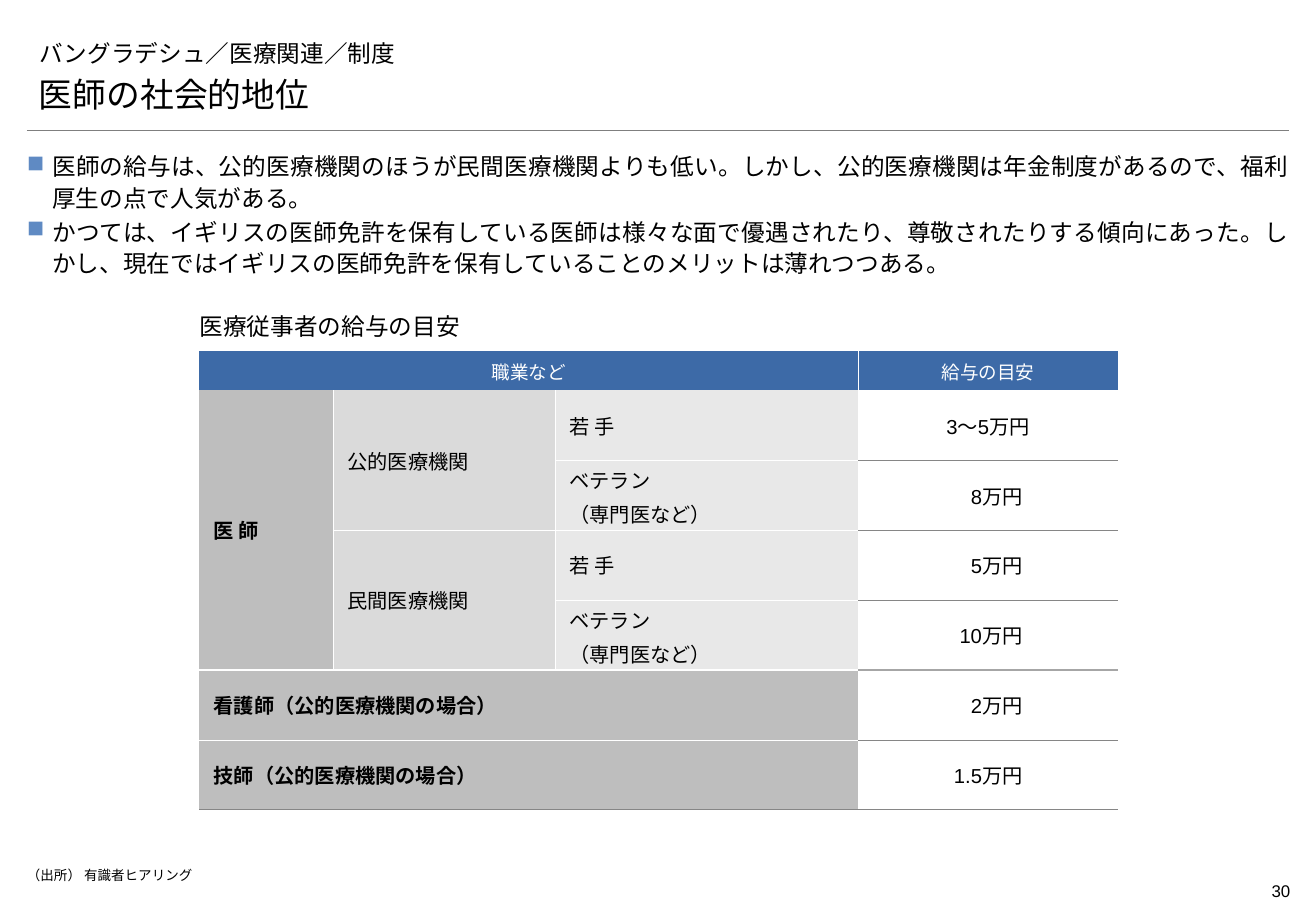
from dataclasses import dataclass

from lxml import etree
from pptx import Presentation
from pptx.dml.color import RGBColor
from pptx.enum.lang import MSO_LANGUAGE_ID
from pptx.enum.shapes import MSO_CONNECTOR
from pptx.enum.text import MSO_ANCHOR, PP_ALIGN
from pptx.oxml.ns import qn
from pptx.util import Pt

LEFT, CENTER, RIGHT, JUSTIFY = PP_ALIGN.LEFT, PP_ALIGN.CENTER, PP_ALIGN.RIGHT, PP_ALIGN.JUSTIFY
TOP, MIDDLE, BOTTOM = MSO_ANCHOR.TOP, MSO_ANCHOR.MIDDLE, MSO_ANCHOR.BOTTOM
JAPANESE = MSO_LANGUAGE_ID.JAPANESE
STRAIGHT = MSO_CONNECTOR.STRAIGHT


@dataclass(frozen=True)
class Theme:
    text: str = "000000"
    white: str = "FFFFFF"
    header: str = "3D6AA7"
    bullet: str = "5F8AC3"
    group: str = "BEBEBE"
    facility: str = "DADADA"
    career: str = "E8E8E8"
    rule: str = "7F7F7F"
    row_rule: str = "868686"
    section_rule: str = "A6A6A6"
    body_font: str = "Arial"
    heading_font: str = "Montserrat"
    header_font: str = "Noto Sans CJK JP"
    headline_size: float = 20
    body_size: float = 14
    cell_size: float = 12
    header_size: float = 11
    page_size: float = 10
    source_size: float = 8


THEME = Theme()


@dataclass(frozen=True)
class Area:
    left: float
    top: float
    width: float
    height: float


@dataclass(frozen=True)
class Entry:
    """One table cell, with the number of rows and columns it covers."""
    row: int
    column: int
    text: str
    fill: str
    rows: int = 1
    columns: int = 1
    bold: bool = False


@dataclass(frozen=True)
class Border:
    color: str
    width: float = 0.5


MARGIN, CONTENT_WIDTH = 16, 748
TABLE_LEFT, TABLE_TOP = 118.2, 208.2
COLUMN_WIDTHS = [79.2, 131.7, 179.7, 153.7]
HEADER_HEIGHT, ROW_HEIGHT = 23.2, 41.45
VALUE_COLUMN, LAST_DOCTOR_ROW = 3, 4
VALUE_TAB = 94.3

PUBLIC, PRIVATE = "公的医療機関", "民間医療機関"
JUNIOR, VETERAN = "若 手", "ベテラン\n（専門医など）"
PAY = ["3～5万円", "\t8万円", "\t5万円", "\t10万円", "\t2万円", "\t1.5万円"]
POINTS = [
    "医師の給与は、公的医療機関のほうが民間医療機関よりも低い。"
    "しかし、公的医療機関は年金制度があるので、福利厚生の点で人気がある。",
    "かつては、イギリスの医師免許を保有している医師は様々な面で優遇されたり、尊敬されたりする傾向にあった。"
    "しかし、現在ではイギリスの医師免許を保有していることのメリットは薄れつつある。",
]
ENTRIES = [
    Entry(0, 0, "職業など", THEME.header, columns=3),
    Entry(0, VALUE_COLUMN, "給与の目安", THEME.header),
    Entry(1, 0, "医 師", THEME.group, rows=4, bold=True),
    *(Entry(row, 1, name, THEME.facility, rows=2) for row, name in ((1, PUBLIC), (3, PRIVATE))),
    *(Entry(row, 2, JUNIOR if row % 2 else VETERAN, THEME.career) for row in range(1, 5)),
    *(Entry(row, 0, f"{name}（公的医療機関の場合）", THEME.group, columns=3, bold=True)
      for row, name in ((5, "看護師"), (6, "技師"))),
    *(Entry(row, VALUE_COLUMN, pay, THEME.white) for row, pay in enumerate(PAY, 1)),
]


def add_xml(parent, tag: str, **attributes):
    return etree.SubElement(parent, qn(tag), attributes)


def add_bullet(para) -> None:
    properties = para._p.get_or_add_pPr()
    properties.set("marL", str(Pt(15)))
    properties.set("indent", str(Pt(-15)))
    add_xml(add_xml(properties, "a:buClr"), "a:srgbClr", val=THEME.bullet)
    add_xml(properties, "a:buChar", char="■")


def add_tab(para, position: float) -> None:
    tabs = add_xml(para._p.get_or_add_pPr(), "a:tabLst")
    add_xml(tabs, "a:tab", pos=str(Pt(position)), algn="r")


def write(frame, text: str, *, size: float, font: str = THEME.body_font, color: str = THEME.text,
          bold: bool = False, align=LEFT, line_spacing: float = 1.0, before: float = 0,
          after: float = 0, bullet: bool = False, tab: float = 0) -> None:
    """Fill a frame, one paragraph for each line of the text."""
    for number, line in enumerate(text.split("\n")):
        para = frame.add_paragraph() if number else frame.paragraphs[0]
        para.alignment = align
        para.line_spacing = line_spacing
        para.space_before = Pt(before if number else 0)
        para.space_after = Pt(after)
        if bullet:
            add_bullet(para)
        if tab:
            add_tab(para, tab)
        span = para.add_run()
        span.text = line
        span.font.name = font
        span.font.size = Pt(size)
        span.font.bold = bold
        span.font.color.rgb = RGBColor.from_string(color)
        span.font.language_id = JAPANESE


def place(box, area: Area, anchor=TOP, insets=(0, 0, 0, 0)):
    """Set a box's place and insets (left, top, right, bottom); return its text frame."""
    box.left, box.top, box.width, box.height = map(
        Pt, (area.left, area.top, area.width, area.height))
    frame = box.text_frame
    frame.word_wrap = True
    frame.vertical_anchor = anchor
    frame.margin_left, frame.margin_top, frame.margin_right, frame.margin_bottom = map(Pt, insets)
    return frame


def add_text(page, area: Area, text: str, *, anchor=TOP, insets=(0, 0, 0, 0), **text_format) -> None:
    box = page.shapes.add_textbox(0, 0, 0, 0)
    write(place(box, area, anchor, insets), text, **text_format)


def border_below(row: int, column: int) -> Border | None:
    if row <= 0:
        return None
    value = column == VALUE_COLUMN
    if row == LAST_DOCTOR_ROW:
        return Border(THEME.section_rule if value else THEME.white, 1.5)
    return Border(THEME.row_rule if value or row == len(PAY) else THEME.white)


def set_borders(cell, entry: Entry) -> None:
    side = Border(THEME.white)
    borders = {
        "a:lnL": side if entry.column else None,
        "a:lnR": side if entry.column + entry.columns <= VALUE_COLUMN else None,
        "a:lnT": border_below(entry.row - 1, entry.column),
        "a:lnB": border_below(entry.row + entry.rows - 1, entry.column),
    }
    properties = cell._tc.get_or_add_tcPr()
    for position, (tag, border) in enumerate(borders.items()):
        line = etree.Element(qn(tag), w=str(Pt(border.width if border else 0)))
        if border:
            add_xml(add_xml(line, "a:solidFill"), "a:srgbClr", val=border.color)
        else:
            add_xml(line, "a:noFill")
        properties.insert(position, line)


def fill_cell(table, entry: Entry) -> None:
    cell = table.cell(entry.row, entry.column)
    if entry.rows * entry.columns > 1:
        cell.merge(table.cell(entry.row + entry.rows - 1, entry.column + entry.columns - 1))
    header, value = entry.row == 0, entry.column == VALUE_COLUMN
    cell.vertical_anchor = MIDDLE
    cell.margin_left = cell.margin_right = Pt(3 if header or value else 8.5)
    cell.margin_top = cell.margin_bottom = Pt(3.6 if header else 1.4 if value else 2.8)
    cell.fill.solid()
    cell.fill.fore_color.rgb = RGBColor.from_string(entry.fill)
    set_borders(cell, entry)
    tabbed = entry.text.startswith("\t")
    write(cell.text_frame, entry.text, bold=entry.bold, before=3,
          size=THEME.header_size if header else THEME.cell_size,
          font=THEME.header_font if header else THEME.body_font,
          color=THEME.white if header else THEME.text,
          align=CENTER if header or (value and not tabbed) else LEFT,
          tab=VALUE_TAB if tabbed else 0)


def add_pay_table(page) -> None:
    heights = [HEADER_HEIGHT] + [ROW_HEIGHT] * len(PAY)
    table = page.shapes.add_table(len(heights), len(COLUMN_WIDTHS), Pt(TABLE_LEFT), Pt(TABLE_TOP),
                                  Pt(sum(COLUMN_WIDTHS)), Pt(sum(heights))).table
    table.first_row = table.horz_banding = False
    for column, width in zip(table.columns, COLUMN_WIDTHS):
        column.width = Pt(width)
    for row, height in zip(table.rows, heights):
        row.height = Pt(height)
    for entry in ENTRIES:
        fill_cell(table, entry)


def add_rule(page) -> None:
    rule = page.shapes.add_connector(STRAIGHT, Pt(MARGIN), Pt(77.2), Pt(MARGIN + CONTENT_WIDTH), Pt(77.2))
    rule.line.color.rgb = RGBColor.from_string(THEME.rule)
    rule.line.width = Pt(0.25)
    add_xml(rule._element.spPr, "a:effectLst")


def main() -> None:
    deck = Presentation()
    deck.slide_width, deck.slide_height = Pt(780), Pt(540)
    page = deck.slides.add_slide(deck.slide_layouts[5])
    heading = {"anchor": BOTTOM, "insets": (7.2, 3.6, 7.2, 3.6)}
    add_rule(page)
    write(place(page.shapes.title, Area(MARGIN, 15.1, CONTENT_WIDTH, 28.1), **heading),
          "バングラデシュ／医療関連／制度", size=THEME.body_size, font=THEME.heading_font)
    add_text(page, Area(MARGIN, 43.2, CONTENT_WIDTH, 28.1), "医師の社会的地位",
             size=THEME.headline_size, font=THEME.heading_font, **heading)
    add_text(page, Area(MARGIN, 88.6, CONTENT_WIDTH, 74.9), "\n".join(POINTS), size=THEME.body_size,
             align=JUSTIFY, line_spacing=1.1, after=2, bullet=True)
    add_text(page, Area(TABLE_LEFT, 179.3, 351.4, 28.1), "医療従事者の給与の目安", anchor=BOTTOM,
             insets=(0, 3.6, 0, 5.8), size=THEME.body_size, font=THEME.heading_font)
    add_pay_table(page)
    add_text(page, Area(MARGIN, 514.1, 720, 11.5), "（出所） 有識者ヒアリング", size=THEME.source_size)
    add_text(page, Area(707.8, 518.4, 56.9, 19.4), "30", insets=(0, 3.6, 0, 3.6),
             size=THEME.page_size, align=RIGHT)
    deck.save("out.pptx")


if __name__ == "__main__":
    main()
